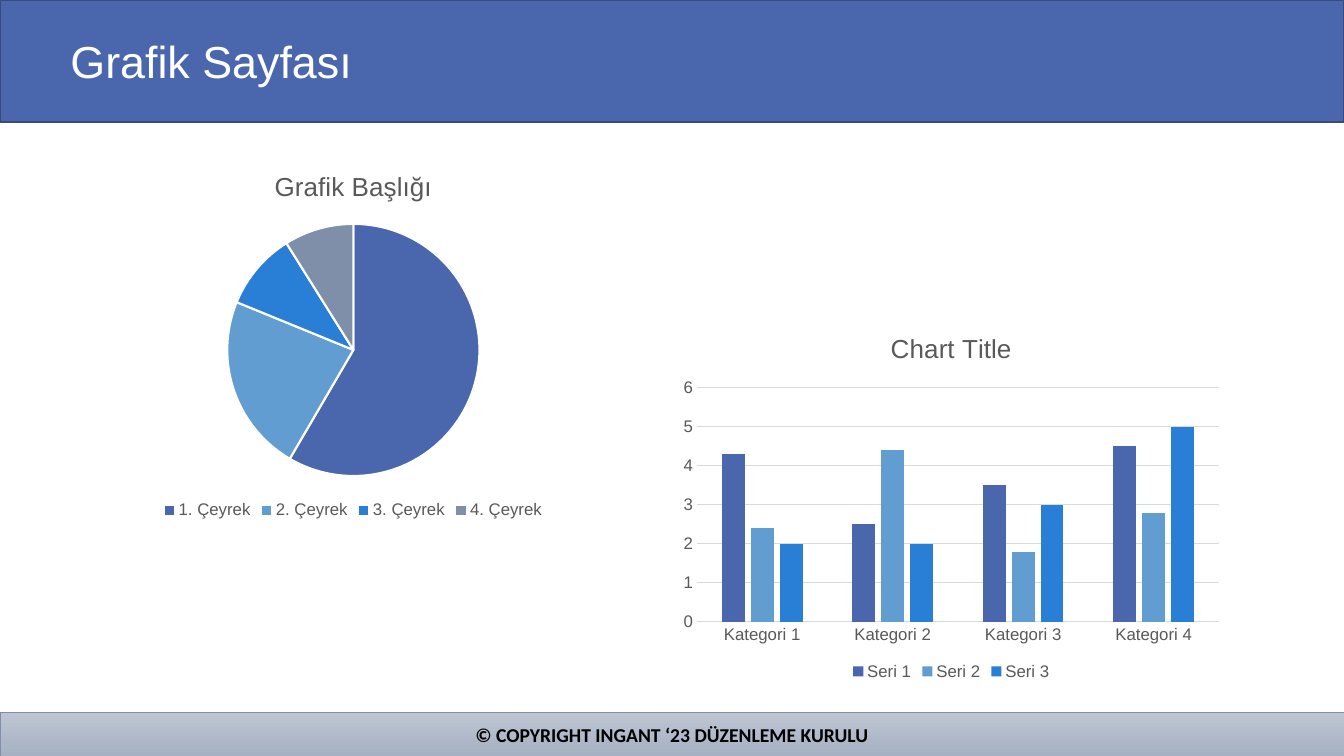
from dataclasses import dataclass

from pptx import Presentation
from pptx.chart.chart import Chart
from pptx.chart.data import CategoryChartData
from pptx.dml.color import RGBColor
from pptx.enum import chart as charts, shapes, text
from pptx.util import Inches, Pt


@dataclass(frozen=True)
class Theme:
    font: str = "Arial"
    footer_font: str = "Calibri"
    palette: tuple[str, ...] = ("4A66AC", "629DD1", "297FD5", "7F8FA9")
    header_line: str = "374B7F"
    footer_top: str = "BEC5D2"
    footer_bottom: str = "A6B1C3"
    white: str = "FFFFFF"
    black: str = "000000"
    label: str = "595959"
    grid: str = "D9D9D9"
    heading_size: float = 32
    chart_title_size: float = 18.6
    footer_size: float = 14
    label_size: float = 12


@dataclass(frozen=True)
class Box:
    left: float
    top: float
    width: float
    height: float

    def lengths(self) -> tuple[int, ...]:
        return tuple(Inches(v) for v in (self.left, self.top, self.width, self.height))


@dataclass(frozen=True)
class ChartPlan:
    kind: charts.XL_CHART_TYPE
    box: Box
    title: str
    categories: tuple[str, ...]
    series: dict[str, tuple[float, ...]]


THEME = Theme()
WIDTH, HEIGHT = 13.33, 7.5
HEADER = Box(0, 0, WIDTH, 1.21)
FOOTER = Box(0, 7.07, WIDTH, 0.43)
HEADING = Box(0.6, 0.24, 12.41, 0.79)

QUARTERS = ChartPlan(
    charts.XL_CHART_TYPE.PIE,
    Box(0, 1.51, 7.01, 3.68),
    "Grafik Başlığı",
    tuple(f"{n}. Çeyrek" for n in range(1, 5)),
    {"Series 1": (59, 23, 10, 9)},
)
CATEGORIES = ChartPlan(
    charts.XL_CHART_TYPE.COLUMN_CLUSTERED,
    Box(6.67, 3.11, 5.53, 3.68),
    "Chart Title",
    tuple(f"Kategori {n}" for n in range(1, 5)),
    {
        "Seri 1": (4.3, 2.5, 3.5, 4.5),
        "Seri 2": (2.4, 4.4, 1.8, 2.8),
        "Seri 3": (2, 2, 3, 5),
    },
)


def rgb(value: str) -> RGBColor:
    return RGBColor.from_string(value)


def style_font(font, size: float, color: str, name: str = THEME.font, bold: bool = False) -> None:
    font.size = Pt(size)
    font.name = name
    font.bold = bold
    font.color.rgb = rgb(color)


def style_line(line, color: str, width: float) -> None:
    line.color.rgb = rgb(color)
    line.width = Pt(width)


def paint(fill, color: str) -> None:
    fill.solid()
    fill.fore_color.rgb = rgb(color)


def add_band(slide, box: Box, line_color: str, line_width: float):
    band = slide.shapes.add_shape(shapes.MSO_SHAPE.RECTANGLE, *box.lengths())
    band.shadow.inherit = False
    style_line(band.line, line_color, line_width)
    return band


def add_header(slide) -> None:
    header = add_band(slide, HEADER, THEME.header_line, 1)
    paint(header.fill, THEME.palette[0])


def add_footer(slide) -> None:
    footer = add_band(slide, FOOTER, THEME.palette[3], 0.5)
    footer.fill.gradient()
    footer.fill.gradient_angle = 270
    for stop, color in zip(footer.fill.gradient_stops, (THEME.footer_top, THEME.footer_bottom)):
        stop.color.rgb = rgb(color)
    footer.text_frame.vertical_anchor = text.MSO_ANCHOR.MIDDLE
    notice = footer.text_frame.paragraphs[0]
    notice.alignment = text.PP_ALIGN.CENTER
    run = notice.add_run()
    run.text = "© COPYRIGHT INGANT ‘23 DÜZENLEME KURULU"
    style_font(run.font, THEME.footer_size, THEME.black, THEME.footer_font, bold=True)


def add_heading(slide) -> None:
    frame = slide.shapes.add_textbox(*HEADING.lengths()).text_frame
    frame.word_wrap = True
    frame.vertical_anchor = text.MSO_ANCHOR.MIDDLE
    heading = frame.paragraphs[0]
    heading.line_spacing = 0.9
    run = heading.add_run()
    run.text = "Grafik Sayfası"
    style_font(run.font, THEME.heading_size, THEME.white)


def add_chart(slide, plan: ChartPlan) -> Chart:
    data = CategoryChartData()
    data.categories = plan.categories
    for name, values in plan.series.items():
        data.add_series(name, values)
    chart = slide.shapes.add_chart(plan.kind, *plan.box.lengths(), data).chart
    style_font(chart.font, THEME.label_size, THEME.label)
    title = chart.chart_title.text_frame.paragraphs[0].add_run()
    title.text = plan.title
    style_font(title.font, THEME.chart_title_size, THEME.label)
    chart.chart_title.include_in_layout = False
    chart.has_legend = True
    chart.legend.position = charts.XL_LEGEND_POSITION.BOTTOM
    chart.legend.include_in_layout = False
    style_font(chart.legend.font, THEME.label_size, THEME.label)
    return chart


def add_pie(slide) -> None:
    plot = add_chart(slide, QUARTERS).plots[0]
    plot.vary_by_categories = True
    for index, color in enumerate(THEME.palette):
        slice_format = plot.series[0].points[index].format
        paint(slice_format.fill, color)
        style_line(slice_format.line, THEME.white, 1.5)


def add_columns(slide) -> None:
    chart = add_chart(slide, CATEGORIES)
    plot = chart.plots[0]
    plot.vary_by_categories = False
    plot.gap_width = 219
    plot.overlap = -27
    for series, color in zip(plot.series, THEME.palette):
        paint(series.format.fill, color)
    for axis in (chart.category_axis, chart.value_axis):
        axis.major_tick_mark = charts.XL_TICK_MARK.NONE
        axis.minor_tick_mark = charts.XL_TICK_MARK.NONE
        style_font(axis.tick_labels.font, THEME.label_size, THEME.label)
    style_line(chart.category_axis.format.line, THEME.grid, 0.75)
    scale = chart.value_axis
    scale.minimum_scale, scale.maximum_scale, scale.major_unit = 0, 6, 1
    scale.format.line.fill.background()
    style_line(scale.major_gridlines.format.line, THEME.grid, 0.75)


def main() -> None:
    deck = Presentation()
    deck.slide_width, deck.slide_height = Inches(WIDTH), Inches(HEIGHT)
    slide = deck.slides.add_slide(deck.slide_layouts[6])
    add_header(slide)
    add_footer(slide)
    add_heading(slide)
    add_pie(slide)
    add_columns(slide)
    deck.save("out.pptx")


if __name__ == "__main__":
    main()
